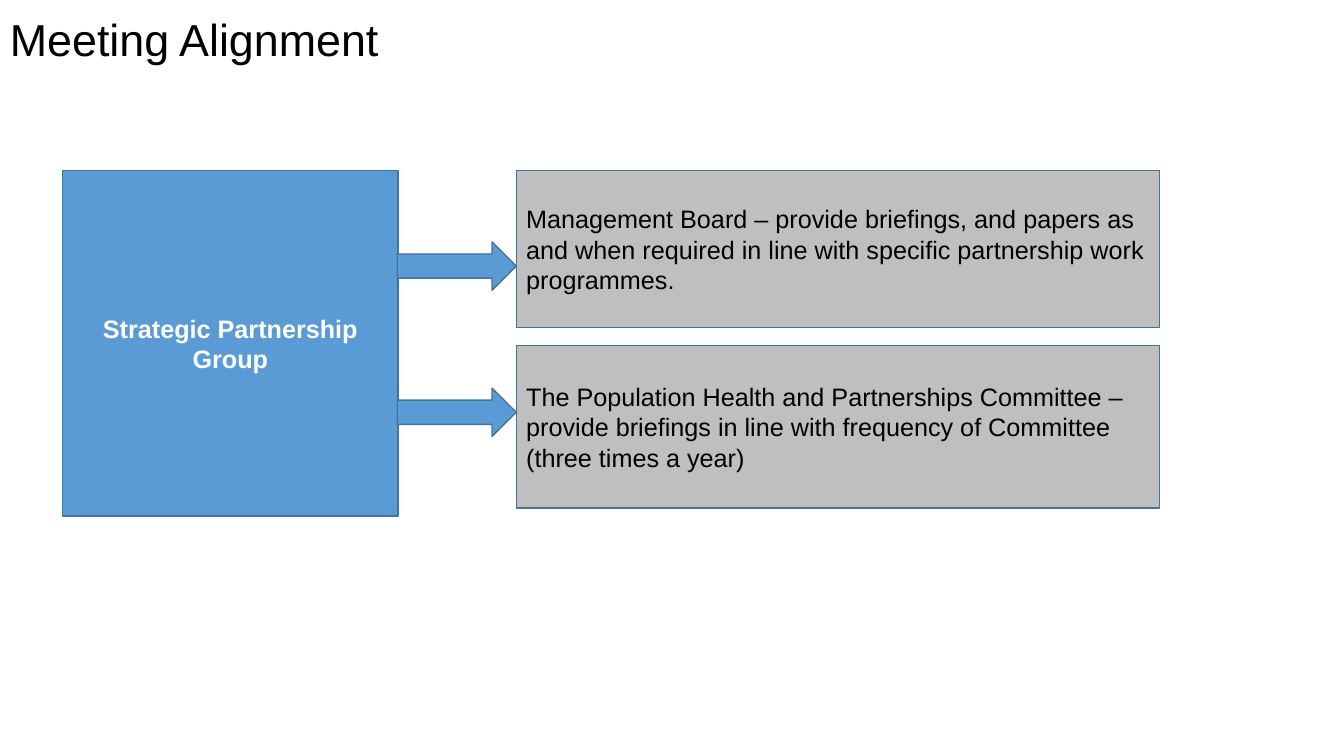
from dataclasses import dataclass

from pptx import Presentation
from pptx.dml.color import RGBColor
from pptx.enum import shapes, text
from pptx.util import Inches, Pt

TITLE = "Meeting Alignment"
GROUP = "Strategic Partnership Group"
MEETINGS = [
    {
        "text": "Management Board – provide briefings, and papers as and when required "
                "in line with specific partnership work programmes.",
        "top": 1.69, "height": 1.56, "arrow_top": 2.4,
    },
    {
        "text": "The Population Health and Partnerships Committee – provide briefings "
                "in line with frequency of Committee (three times a year)",
        "top": 3.43, "height": 1.61, "arrow_top": 3.85,
    },
]


@dataclass(frozen=True)
class Theme:
    font: str = "Arial"
    title_size: int = 32
    body_size: int = 18
    blue: str = "5B9BD5"
    grey: str = "BFBFBF"
    outline: str = "43739E"
    black: str = "000000"
    white: str = "FFFFFF"


THEME = Theme()
GROUP_LEFT, GROUP_TOP, GROUP_WIDTH, GROUP_HEIGHT = 0.62, 1.69, 3.33, 3.43
MEETING_LEFT, MEETING_WIDTH = 5.12, 6.38
ARROW_WIDTH, ARROW_HEIGHT = 1.18, 0.48


def write(shape, words, size, color, align=text.PP_ALIGN.LEFT,
          anchor=text.MSO_ANCHOR.MIDDLE, bold=False):
    frame = shape.text_frame
    frame.word_wrap = True
    frame.vertical_anchor = anchor
    paragraph = frame.paragraphs[0]
    paragraph.text = words
    paragraph.alignment = align
    paragraph.font.name = THEME.font
    paragraph.font.size = Pt(size)
    paragraph.font.bold = bold
    paragraph.font.color.rgb = RGBColor.from_string(color)
    return paragraph


def add_block(slide, kind, left, top, width, height, fill):
    shape = slide.shapes.add_shape(
        kind, Inches(left), Inches(top), Inches(width), Inches(height))
    shape.shadow.inherit = False
    shape.fill.solid()
    shape.fill.fore_color.rgb = RGBColor.from_string(fill)
    shape.line.color.rgb = RGBColor.from_string(THEME.outline)
    shape.line.width = Pt(1)
    return shape


def main():
    presentation = Presentation()
    presentation.slide_width = Inches(13.33)
    presentation.slide_height = Inches(7.5)
    slide = presentation.slides.add_slide(presentation.slide_layouts[6])

    title = slide.shapes.add_textbox(Inches(0), Inches(0.13), Inches(11.5), Inches(1.45))
    heading = write(title, TITLE, THEME.title_size, THEME.black,
                    anchor=text.MSO_ANCHOR.TOP)
    heading.line_spacing = 0.9

    rectangle = shapes.MSO_SHAPE.RECTANGLE
    group = add_block(slide, rectangle, GROUP_LEFT, GROUP_TOP,
                      GROUP_WIDTH, GROUP_HEIGHT, THEME.blue)
    write(group, GROUP, THEME.body_size, THEME.white,
          align=text.PP_ALIGN.CENTER, bold=True)

    for meeting in MEETINGS:
        box = add_block(slide, rectangle, MEETING_LEFT, meeting["top"],
                        MEETING_WIDTH, meeting["height"], THEME.grey)
        write(box, meeting["text"], THEME.body_size, THEME.black)
        add_block(slide, shapes.MSO_SHAPE.RIGHT_ARROW, MEETING_LEFT - ARROW_WIDTH,
                  meeting["arrow_top"], ARROW_WIDTH, ARROW_HEIGHT, THEME.blue)

    presentation.save("out.pptx")


if __name__ == "__main__":
    main()
